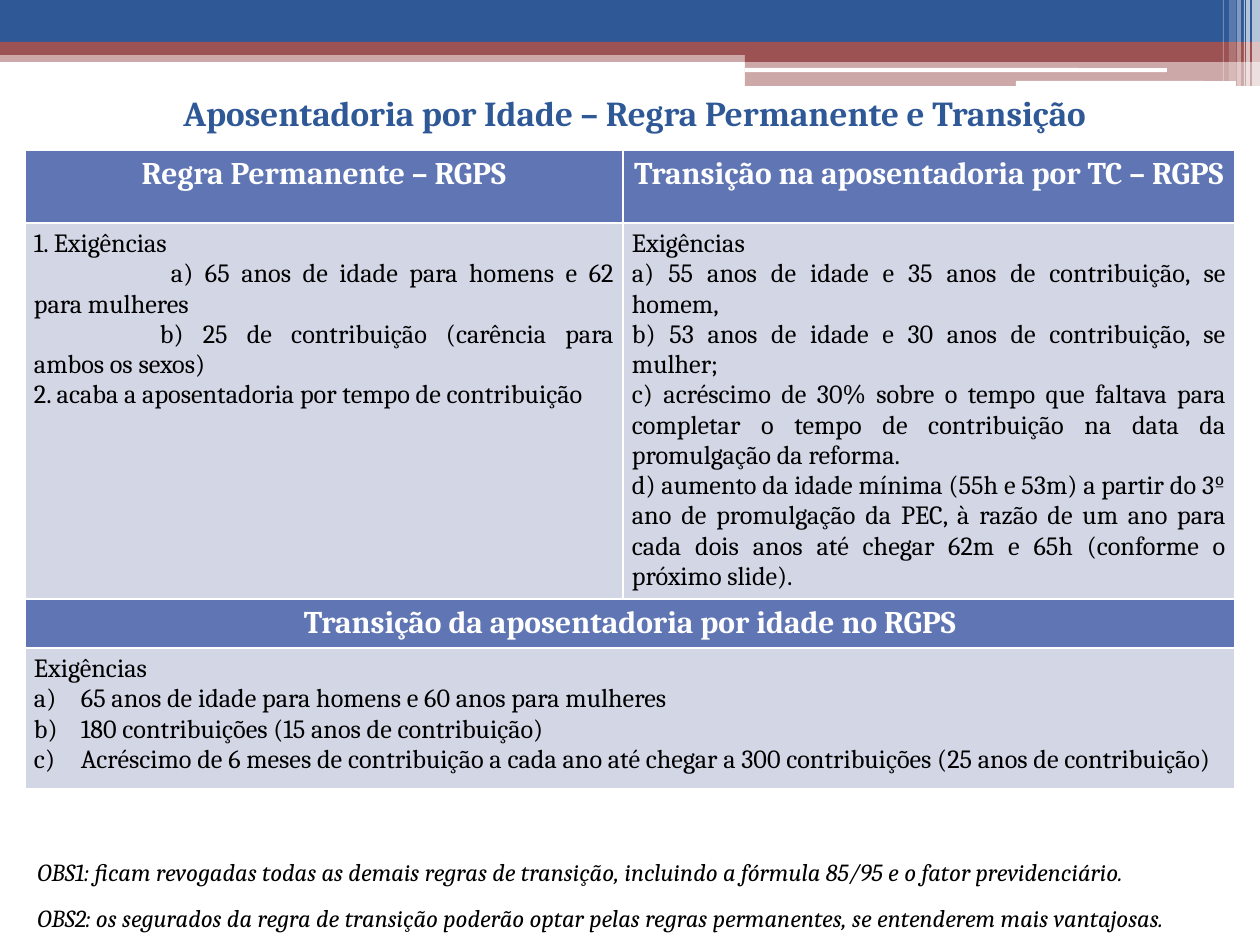
"""Build the slide on permanent and transitional retirement rules."""
import lxml.etree
import pptx
import pptx.dml.color
import pptx.enum.shapes
import pptx.enum.text
import pptx.oxml.ns
import pptx.util

EMU_PER_PX = 914400 / 126
FONT = "Cambria"
COLORS = {"blue": "2F5897", "red": "9C5252", "white": "FFFFFF", "black": "000000",
          "header": "6076B4", "body": "D2D6E5"}
ALIGN = pptx.enum.text.PP_ALIGN
BANDS = [
    ("red", 50, 0, 50, 1260, 12),
    ("blue", 100, 0, 0, 1260, 43),
    ("red", 100, 0, 42, 1260, 13),
    ("red", 100, 745, 49, 515, 13),
    ("red", 50, 745, 61, 515, 25),
]
ROUNDED_BARS = [("white", 100, 745, 68, 422, 4), ("white", 100, 1016, 81, 220, 5)]
STRIPES = [
    ("white", 65, 1252, 0, 8, 86),
    ("white", 65, 1246, 0, 4, 86),
    ("white", 60, 1244, 0, 1, 86),
    ("white", 40, 1237, 0, 4, 86),
    ("white", 20, 1229, 0, 7, 81),
    ("white", 30, 1223, 0, 1, 81),
]
PERMANENT_RULE = [
    ("1. Exigências", 0),
    ("a) 65 anos de idade para homens e 62 para mulheres", 137),
    ("b) 25 de contribuição (carência para ambos os sexos)", 126),
    ("2. acaba a aposentadoria por tempo de contribuição", 0),
]
SERVICE_TRANSITION = [(text, 0) for text in (
    "Exigências",
    "a) 55 anos de idade e 35 anos de contribuição, se homem,",
    "b) 53 anos de idade e 30 anos de contribuição, se mulher;",
    "c) acréscimo de 30% sobre o tempo que faltava para completar o tempo de "
    "contribuição na data da promulgação da reforma.",
    "d) aumento da idade mínima (55h e 53m) a partir do 3º ano de promulgação da PEC, "
    "à razão de um ano para cada dois anos até chegar 62m e 65h (conforme o próximo slide).",
)]
AGE_TRANSITION = [
    ("Exigências", 0),
    ("65 anos de idade para homens e 60 anos para mulheres", -47),
    ("180 contribuições (15 anos de contribuição)", -47),
    ("Acréscimo de 6 meses de contribuição a cada ano até chegar a 300 contribuições "
     "(25 anos de contribuição)", -47),
]
NOTES = [
    "OBS1: ficam revogadas todas as demais regras de transição, incluindo a fórmula 85/95 "
    "e o fator previdenciário.",
    "OBS2: os segurados da regra de transição poderão optar pelas regras permanentes, "
    "se entenderem mais vantajosas.",
]


def px(length):
    """Turn pixels into EMU."""
    return pptx.util.Emu(round(length * EMU_PER_PX))


def set_fill(fill, color, opacity=100):
    """Apply a solid fill with an opacity in percent."""
    fill.solid()
    fill.fore_color.rgb = pptx.dml.color.RGBColor.from_string(COLORS[color])
    if opacity < 100:
        color_element = fill._xPr.find(".//" + pptx.oxml.ns.qn("a:srgbClr"))
        lxml.etree.SubElement(color_element, pptx.oxml.ns.qn("a:alpha"), val=str(opacity * 1000))


def format_paragraph(paragraph, size, color, alignment, bold=False, italic=False):
    """Set the font and alignment of a paragraph."""
    paragraph.alignment = alignment
    font = paragraph.font
    font.name, font.size, font.bold, font.italic = FONT, pptx.util.Pt(size), bold, italic
    font.color.rgb = pptx.dml.color.RGBColor.from_string(COLORS[color])


def set_indent(paragraph, indent):
    """Indent the first line, or hang a lettered item if negative."""
    properties = paragraph._p.get_or_add_pPr()
    properties.set("marL", str(px(max(-indent, 0))))
    properties.set("indent", str(px(indent)))
    if indent < 0:
        numbering = lxml.etree.Element(pptx.oxml.ns.qn("a:buAutoNum"), type="alphaLcParenR")
        properties.insert_element_before(numbering, "a:tabLst", "a:defRPr", "a:extLst")


def add_bars(slide, kind, bars):
    """Add plain decorative bars of one preset shape."""
    for color, opacity, *box in bars:
        shape = slide.shapes.add_shape(kind, *map(px, box))
        shape.shadow.inherit = False
        shape.line.fill.background()
        set_fill(shape.fill, color, opacity)


def add_title(slide, text):
    """Place and format the title placeholder."""
    title = slide.shapes.title
    title.left, title.top, title.width, title.height = map(px, (10, 55, 1250, 115))
    title.text_frame.text = text
    title.text_frame.vertical_anchor = pptx.enum.text.MSO_ANCHOR.MIDDLE
    format_paragraph(title.text_frame.paragraphs[0], 20, "blue", ALIGN.CENTER, bold=True)


def prepare_cell(cell, color):
    """Set the fill and margins of a cell."""
    set_fill(cell.fill, color)
    cell.margin_left = cell.margin_right = px(9)
    cell.margin_top = cell.margin_bottom = px(6)


def fill_header(cell, text):
    """Write a heading cell."""
    prepare_cell(cell, "header")
    cell.text_frame.text = text
    format_paragraph(cell.text_frame.paragraphs[0], 18, "white", ALIGN.CENTER, bold=True)


def fill_body(cell, items):
    """Write a cell of justified paragraphs."""
    prepare_cell(cell, "body")
    cell.text_frame.text = "\n".join(text for text, _ in items)
    for paragraph, (_, indent) in zip(cell.text_frame.paragraphs, items):
        format_paragraph(paragraph, 15, "black", ALIGN.JUSTIFY)
        if indent:
            set_indent(paragraph, indent)


def add_rules_table(slide):
    """Add the table that compares the rules."""
    widths, heights = (598, 612), (73, 376, 49, 141)
    box = map(px, (25, 150, sum(widths), sum(heights)))
    table = slide.shapes.add_table(len(heights), len(widths), *box).table
    for column, width in zip(table.columns, widths):
        column.width = px(width)
    for row, height in zip(table.rows, heights):
        row.height = px(height)
    for row in (2, 3):
        table.cell(row, 0).merge(table.cell(row, 1))
    fill_header(table.cell(0, 0), "Regra Permanente – RGPS")
    fill_header(table.cell(0, 1), "Transição na aposentadoria por TC – RGPS")
    fill_body(table.cell(1, 0), PERMANENT_RULE)
    fill_body(table.cell(1, 1), SERVICE_TRANSITION)
    fill_header(table.cell(2, 0), "Transição da aposentadoria por idade no RGPS")
    fill_body(table.cell(3, 0), AGE_TRANSITION)


def add_notes(slide):
    """Add the remarks below the table."""
    text_frame = slide.shapes.add_textbox(*map(px, (25, 849, 1260, 90))).text_frame
    text_frame.word_wrap = True
    text_frame.text = "\n".join(NOTES)
    for paragraph in text_frame.paragraphs:
        format_paragraph(paragraph, 14, "black", ALIGN.JUSTIFY, italic=True)
        paragraph.line_spacing = 1.07
        paragraph.space_after = pptx.util.Pt(8)


def main():
    """Build and save the presentation."""
    presentation = pptx.Presentation()
    presentation.slide_width, presentation.slide_height = px(1260), px(945)
    slide = presentation.slides.add_slide(presentation.slide_layouts[5])
    shapes = pptx.enum.shapes.MSO_SHAPE
    add_bars(slide, shapes.RECTANGLE, BANDS)
    add_bars(slide, shapes.ROUNDED_RECTANGLE, ROUNDED_BARS)
    add_bars(slide, shapes.RECTANGLE, STRIPES)
    add_title(slide, "Aposentadoria por Idade – Regra Permanente e Transição")
    add_rules_table(slide)
    add_notes(slide)
    presentation.save("out.pptx")


if __name__ == "__main__":
    main()
